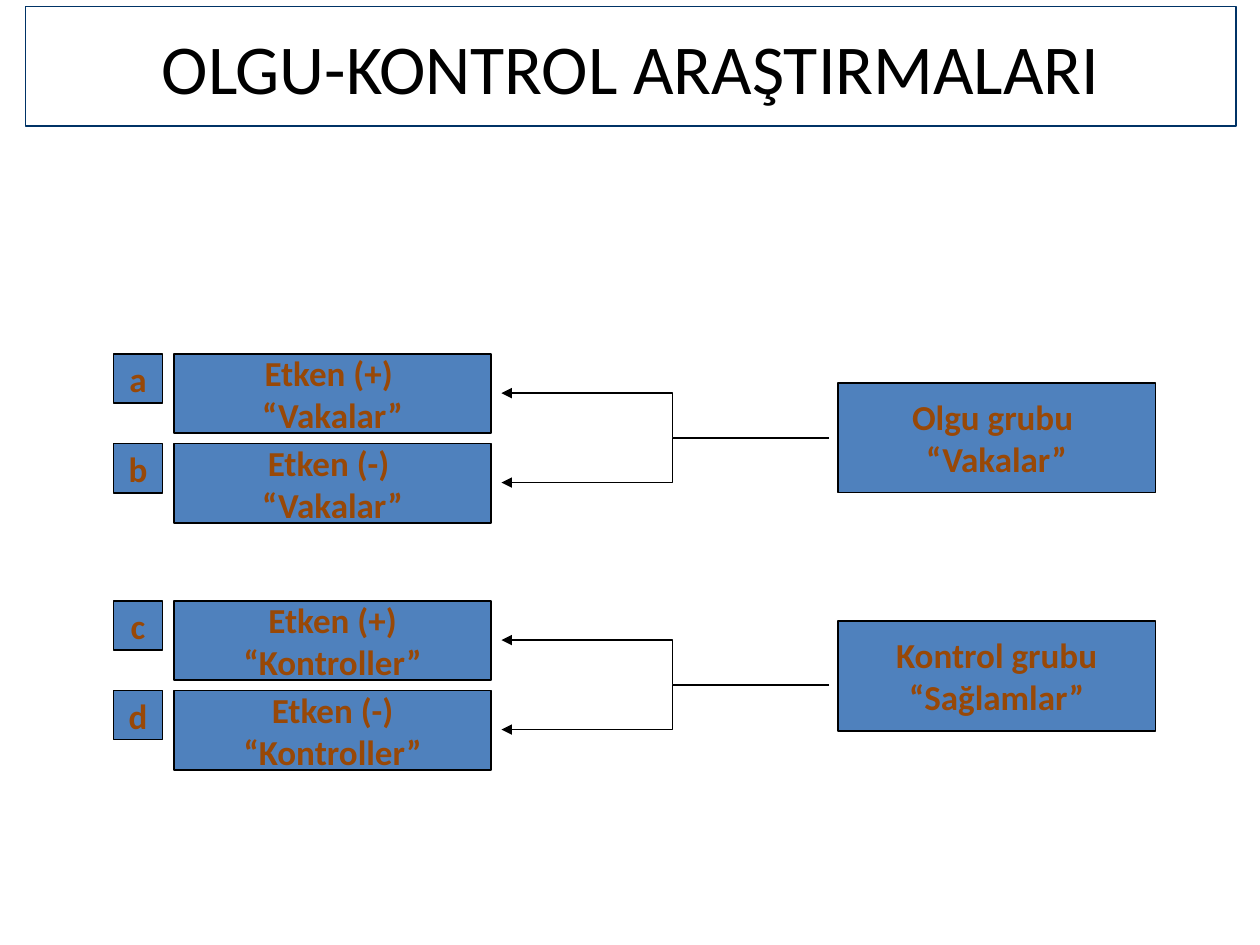
from dataclasses import dataclass
from pptx import Presentation
from pptx.dml.color import RGBColor
from pptx.enum.shapes import MSO_SHAPE
from pptx.enum.text import MSO_ANCHOR, PP_ALIGN
from pptx.oxml.ns import qn
from pptx.util import Inches, Pt
from lxml import etree

RECT = MSO_SHAPE.RECTANGLE
CENTER = PP_ALIGN.CENTER
MIDDLE = MSO_ANCHOR.MIDDLE


@dataclass(frozen=True)
class Theme:
    font: str = "Calibri"
    box: str = "4F81BD"
    label: str = "984807"
    ink: str = "000000"
    frame: str = "003366"
    title_size: int = 40
    label_size: int = 20


THEME = Theme()


def rgb(value):
    return RGBColor.from_string(value)


def add_text(sp, lines, size=THEME.label_size, color=THEME.label, bold=True, wrap=False):
    tf = sp.text_frame
    tf.word_wrap = wrap
    tf.vertical_anchor = MIDDLE
    for i, line in enumerate(lines):
        p = tf.paragraphs[0] if i == 0 else tf.add_paragraph()
        p.alignment = CENTER
        r = p.add_run()
        r.text = line
        r.font.name = THEME.font
        r.font.size = Pt(size)
        r.font.bold = bold
        r.font.color.rgb = rgb(color)


def add_box(s, x, y, w, h, lines, fill=THEME.box, line=THEME.ink, weight=1, **text):
    sp = s.shapes.add_shape(RECT, Inches(x), Inches(y), Inches(w), Inches(h))
    sp.shadow.inherit = False
    if fill:
        sp.fill.solid()
        sp.fill.fore_color.rgb = rgb(fill)
    else:
        sp.fill.background()
    sp.line.color.rgb = rgb(line)
    sp.line.width = Pt(weight)
    add_text(sp, lines, **text)


def add_elbow_arrow(s, points):
    start, *rest = [(Inches(x), Inches(y)) for x, y in points]
    builder = s.shapes.build_freeform(*start)
    builder.add_line_segments(rest, close=False)
    sp = builder.convert_to_shape()
    sp.shadow.inherit = False
    sp.fill.background()
    sp.line.color.rgb = rgb(THEME.ink)
    sp.line.width = Pt(0.75)
    etree.SubElement(sp.line._get_or_add_ln(), qn("a:tailEnd"), type="triangle")


def add_fork(s, x, y, w, h):
    middle = y + h / 2
    spine = x + 1.36
    for start_y, end_y in ((middle - 0.005, y), (middle + 0.005, y + h)):
        add_elbow_arrow(s, [(x + w, start_y), (spine, start_y), (spine, end_y), (x, end_y)])


def add_study_arm(s, x, y, group, group_dy, outcomes):
    add_box(s, x + 5.75, y + group_dy, 2.52, 0.87, group)
    add_fork(s, x + 3.08, y + 0.31, 2.6, 0.71)
    for i, (letter, lines) in enumerate(outcomes):
        top = y + i * 0.71
        add_box(s, x + 0.48, top, 2.52, 0.63, lines)
        add_box(s, x, top, 0.39, 0.39, [letter])


def add_title(s, x, y, w, h, title):
    add_box(s, x, y, w, h, [title], fill=None, line=THEME.frame, weight=0.75,
            size=THEME.title_size, color=THEME.ink, bold=False, wrap=True)


def main():
    prs = Presentation()
    prs.slide_width, prs.slide_height = Inches(10), Inches(7.5)
    s = prs.slides.add_slide(prs.slide_layouts[6])
    add_study_arm(s, 0.9, 2.81, ["Olgu grubu ", "“Vakalar”"], 0.23,
                  [("a", ["Etken (+) ", "“Vakalar”"]), ("b", ["Etken (-) ", "“Vakalar”"])])
    add_study_arm(s, 0.9, 4.77, ["Kontrol grubu", "“Sağlamlar”"], 0.16,
                  [("c", ["Etken (+)", "“Kontroller”"]), ("d", ["Etken (-)", "“Kontroller”"])])
    add_title(s, 0.2, 0.05, 9.61, 0.95, "OLGU-KONTROL ARAŞTIRMALARI")
    prs.save("out.pptx")


if __name__ == "__main__":
    main()
